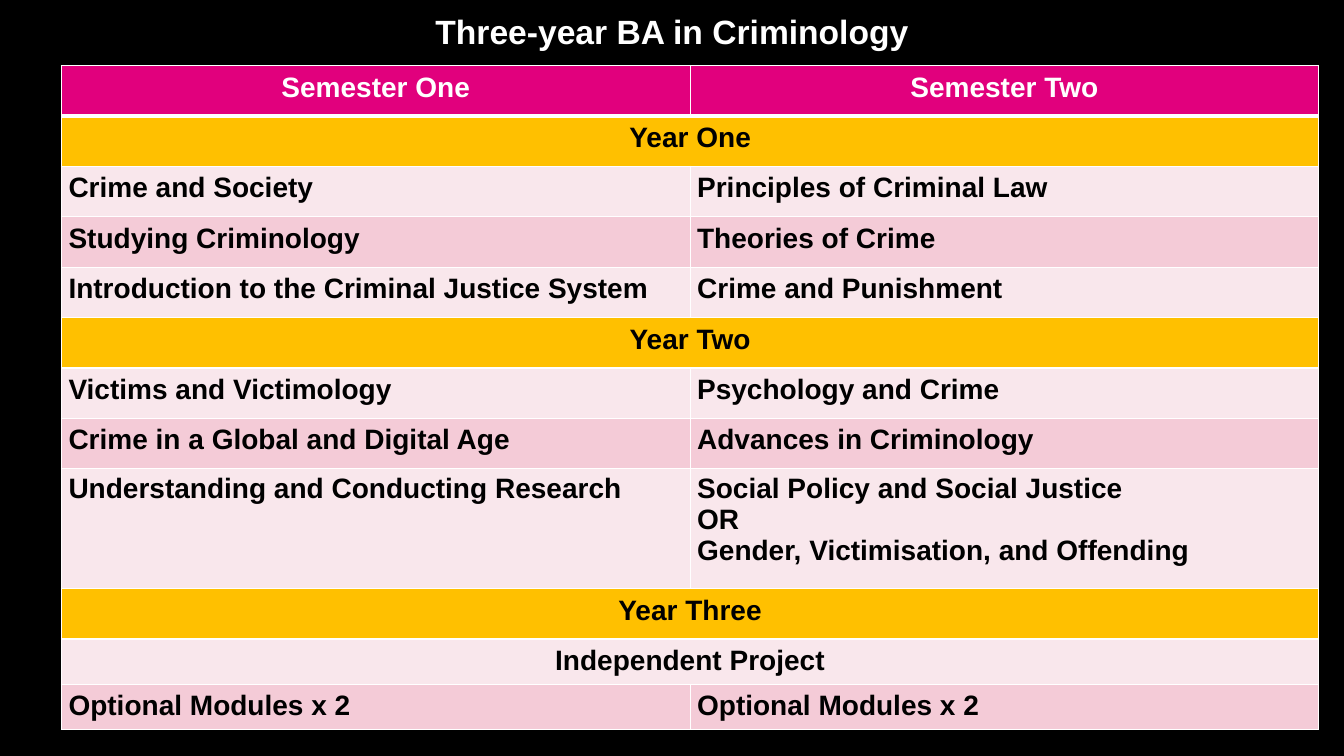
from pptx import Presentation
from pptx import util as u
from pptx.dml.color import RGBColor
from pptx.enum import text
from pptx.oxml import parse_xml
from pptx.oxml.ns import nsdecls


def color(value):
    return RGBColor.from_string(value)


def add_borders(cell, widths):
    properties = cell._tc.get_or_add_tcPr()
    for index, (side, width) in enumerate(widths.items()):
        properties.insert(index, parse_xml(
            f'<a:ln{side} {nsdecls("a")} w="{u.Pt(width)}"><a:solidFill>'
            f'<a:srgbClr val="FFFFFF"/></a:solidFill></a:ln{side}>'))


modules = [
    ["Semester One", "Semester Two"],
    ["Year One"],
    ["Crime and Society", "Principles of Criminal Law"],
    ["Studying Criminology", "Theories of Crime"],
    ["Introduction to the Criminal Justice System", "Crime and Punishment"],
    ["Year Two"],
    ["Victims and Victimology", "Psychology and Crime"],
    ["Crime in a Global and Digital Age", "Advances in Criminology"],
    ["Understanding and Conducting Research",
     "Social Policy and Social Justice\nOR\nGender, Victimisation, and Offending"],
    ["Year Three"],
    ["Independent Project"],
    ["Optional Modules x 2", "Optional Modules x 2"],
]
heights = [0.5] * 8 + [1.19, 0.5, 0.45, 0.45]

deck = Presentation()
deck.slide_width = u.Inches(13.33)
deck.slide_height = u.Inches(7.5)
page = deck.slides.add_slide(deck.slide_layouts[6])
page.background.fill.solid()
page.background.fill.fore_color.rgb = color("000000")

title = page.shapes.add_textbox(u.Inches(0.43), u.Inches(0.22), u.Inches(12.47), u.Inches(0.9))
frame = title.text_frame
frame.word_wrap = True
frame.margin_left = frame.margin_right = frame.margin_top = frame.margin_bottom = 0
frame.text = "Three-year BA in Criminology"
para = frame.paragraphs[0]
para.alignment = text.PP_ALIGN.CENTER
para.line_spacing = 0.7
para.font.name = "Arial"
para.font.size = u.Pt(24)
para.font.bold = True
para.font.color.rgb = color("FFFFFF")

table = page.shapes.add_table(len(modules), 2, u.Inches(0.61), u.Inches(0.65),
                              u.Inches(12.47), u.Inches(6.63)).table
for column in table.columns:
    column.width = u.Inches(6.235)

for row, (names, height) in enumerate(zip(modules, heights)):
    table.rows[row].height = u.Inches(height)
    merged = len(names) == 1
    header = row == 0
    choice = any("\n" in name for name in names)
    if header:
        fill = "E1007D"
    elif names[0].startswith("Year"):
        fill = "FFC000"
    else:
        fill = "F4CBD7" if row % 2 else "F9E7EC"

    for column in range(2):
        cell = table.cell(row, column)
        cell.margin_left = cell.margin_right = u.Inches(0.07)
        cell.margin_top = cell.margin_bottom = u.Inches(0.04)
        cell.fill.solid()
        cell.fill.fore_color.rgb = color(fill)
        add_borders(cell, {"L": 1, "R": 1, "T": 3 if row == 1 else 1, "B": 3 if header else 1})
        if column >= len(names):
            continue
        cell.text = names[column]
        for para in cell.text_frame.paragraphs:
            para.alignment = text.PP_ALIGN.CENTER if header or merged else text.PP_ALIGN.LEFT
            if not choice:
                para.line_spacing = 1.07
                para.space_after = u.Pt(8)
            para.font.name = "Arial"
            para.font.size = u.Pt(20)
            para.font.bold = True
            para.font.color.rgb = color("FFFFFF" if header else "000000")
    if merged:
        table.cell(row, 0).merge(table.cell(row, 1))

deck.save("out.pptx")
